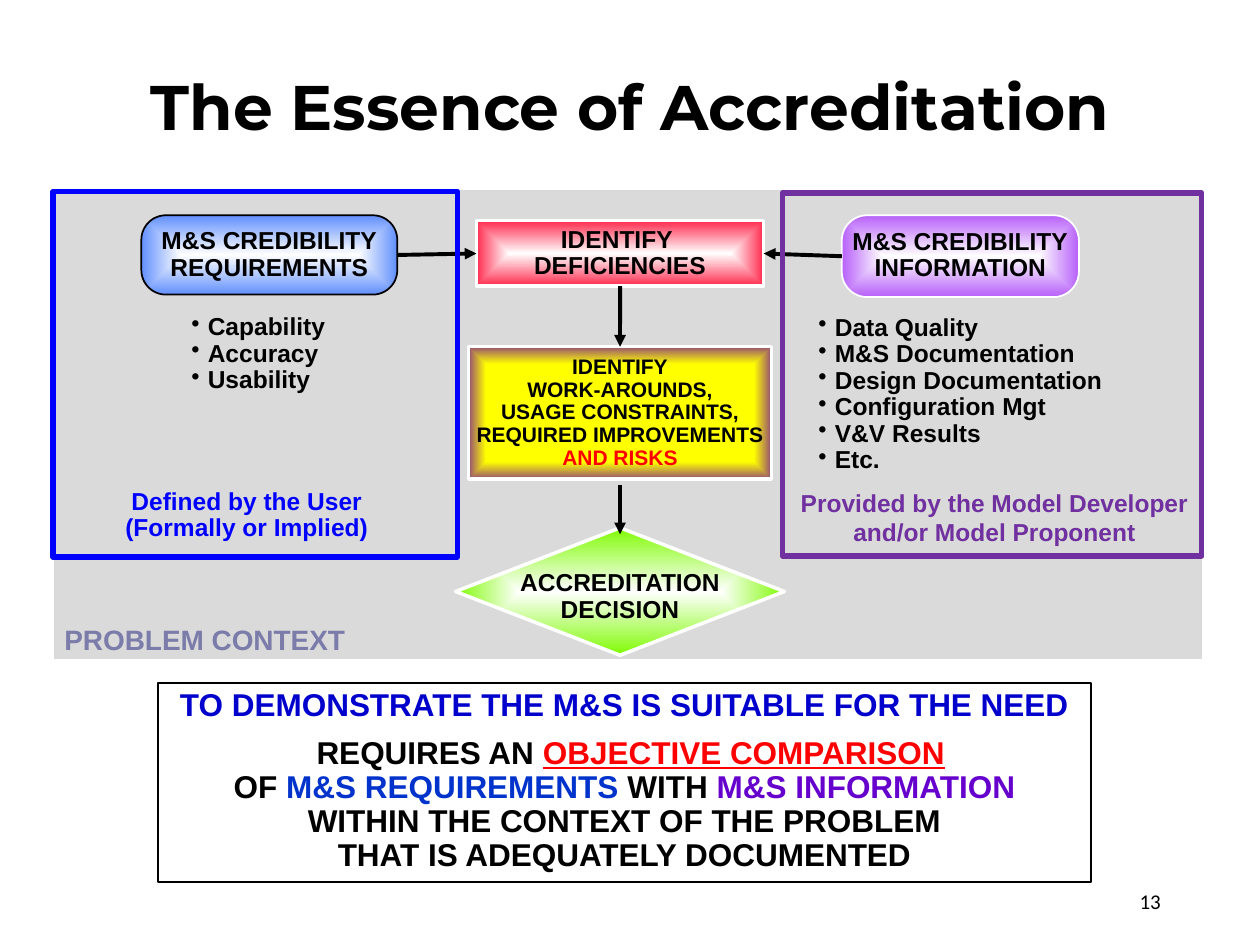
import pptx
import pptx.dml.color
import pptx.enum.shapes
import pptx.enum.text
import pptx.oxml
import pptx.oxml.ns
import pptx.util
from pptx.util import Cm

SHAPES = pptx.enum.shapes.MSO_SHAPE
ALIGN = pptx.enum.text.PP_ALIGN
ANCHOR = pptx.enum.text.MSO_ANCHOR
TOP, LEFT, BOTTOM, RIGHT = range(4)
BLACK, WHITE, RED = "000000", "FFFFFF", "FF0000"


def color(value):
    return pptx.dml.color.RGBColor.from_string(value)


def add_xml(parent, tag, content="", attributes=""):
    namespace = pptx.oxml.ns.nsdecls("a")
    element = pptx.oxml.parse_xml(f"<a:{tag} {namespace} {attributes}>{content}</a:{tag}>")
    parent.append(element)
    return element


def within(box, left, top, width, height):
    """Turn a place relative to a box into a place on the slide."""
    return box[0] + left, box[1] + top, width, height


def write_text(shape, paragraphs, size, ink=BLACK, font="Arial", bold=True, align=ALIGN.CENTER,
               anchor=ANCHOR.TOP, spacing=0.9, wrap=False, bullet=False):
    """Each paragraph is a string or a list of (text, colour) runs."""
    frame = shape.text_frame
    frame.word_wrap = wrap
    frame.vertical_anchor = anchor
    for index, content in enumerate(paragraphs):
        paragraph = frame.add_paragraph() if index else frame.paragraphs[0]
        paragraph.alignment = align
        paragraph.line_spacing = spacing
        if bullet:
            properties = paragraph._p.get_or_add_pPr()
            properties.set("marL", str(Cm(0.33)))
            properties.set("indent", str(-Cm(0.33)))
            add_xml(properties, "buChar", attributes='char="•"')
        for text, run_ink in [(content, ink)] if isinstance(content, str) else content:
            run = paragraph.add_run()
            run.text = text
            run.font.name = font
            run.font.size = pptx.util.Pt(size)
            run.font.bold = bold
            run.font.color.rgb = color(run_ink)
    return frame


def add_text(slide, place, paragraphs, size, **style):
    shape = slide.shapes.add_textbox(*map(Cm, place))
    return write_text(shape, paragraphs, size, **style)


def add_box(slide, kind, place, line=None, line_width=1, fill=None):
    shape = slide.shapes.add_shape(kind, *map(Cm, place))
    shape.shadow.inherit = False
    if fill:
        shape.fill.solid()
        shape.fill.fore_color.rgb = color(fill)
    else:
        shape.fill.background()
    if line:
        shape.line.color.rgb = color(line)
        shape.line.width = pptx.util.Pt(line_width)
    else:
        shape.line.fill.background()
    return shape


def add_glow_box(slide, kind, place, inner, outer, line, line_width, start=0):
    """A box whose colour runs from its centre to its edges."""
    shape = add_box(slide, kind, place, line, line_width)
    stops = "".join(f'<a:gs pos="{position * 1000}"><a:srgbClr val="{value}"/></a:gs>'
                    for position, value in ((start, inner), (100, outer)))
    center = '<a:fillToRect l="50000" t="50000" r="50000" b="50000"/>'
    gradient = add_xml(shape._element.spPr, "gradFill",
                       f'<a:gsLst>{stops}</a:gsLst><a:path path="shape">{center}</a:path>',
                       'rotWithShape="1"')
    no_fill = shape._element.spPr.find(pptx.oxml.ns.qn("a:noFill"))
    shape._element.spPr.replace(no_fill, gradient)
    return shape


def add_arrow(slide, start=(0, 0), end=(0, 0), joined=None):
    """An arrow between two points, or joined to two (shape, side) pairs."""
    connector = slide.shapes.add_connector(
        pptx.enum.shapes.MSO_CONNECTOR.STRAIGHT, *map(Cm, (*start, *end)))
    if joined:
        connector.begin_connect(*joined[0])
        connector.end_connect(*joined[1])
    connector.line.color.rgb = color(BLACK)
    connector.line.width = pptx.util.Pt(2.25)
    add_xml(connector.line._get_or_add_ln(), "tailEnd", attributes='type="triangle"')
    add_xml(connector._element.spPr, "effectLst")


def draw_title(slide, box):
    add_text(slide, box, ["The Essence of Accreditation"], 36, font="Montserrat",
             anchor=ANCHOR.MIDDLE, spacing=1.0, wrap=True)


def draw_flow(slide, box):
    # Grey problem context
    add_box(slide, SHAPES.RECTANGLE, box, WHITE, 1, "DADADA")
    add_text(slide, within(box, -0.05, 8.69, 6.22, 0.86), ["PROBLEM CONTEXT"], 16, ink="7C7CAA")

    # Inputs on both sides
    inputs = []
    for place, outer, line, word in (
            ((1.78, 0.53, 5.16, 1.6), "618FFD", BLACK, "REQUIREMENTS"),
            ((15.9, 0.53, 4.78, 1.65), "B760F9", WHITE, "INFORMATION")):
        shape = add_glow_box(slide, SHAPES.ROUNDED_RECTANGLE, within(box, *place),
                             WHITE, outer, line, 1)
        shape.adjustments[0] = 0.31
        write_text(shape, ["M&S CREDIBILITY", word], 14)
        inputs.append(shape)
    requirements, information = inputs

    # Steps centred on one axis
    axis = 11.43

    def add_step(kind, top, width, height, inner, outer, start=0):
        place = within(box, axis - width / 2, top, width, height)
        return add_glow_box(slide, kind, place, inner, outer, WHITE, 2, start)

    deficiencies = add_step(SHAPES.RECTANGLE, 0.64, 5.79, 1.32, WHITE, "FF2A4D")
    write_text(deficiencies, ["IDENTIFY ", "DEFICIENCIES"], 14, wrap=True)
    remedies = add_step(SHAPES.RECTANGLE, 3.18, 6.1, 2.67, "FFFF00", "954F72", 74)
    write_text(remedies, ["IDENTIFY", "WORK-AROUNDS,", "USAGE CONSTRAINTS,",
                          "REQUIRED IMPROVEMENTS", [("AND RISKS", RED)]],
               12, anchor=ANCHOR.MIDDLE)
    decision = add_step(SHAPES.DIAMOND, 6.83, 6.63, 2.57, WHITE, "7FFB03")
    frame = write_text(decision, ["ACCREDITATION", "DECISION"], 14, anchor=ANCHOR.BOTTOM)
    frame.margin_left = frame.margin_right = frame.margin_top = frame.margin_bottom = 0

    # Arrows
    add_arrow(slide, joined=((requirements, RIGHT), (deficiencies, LEFT)))
    add_arrow(slide, joined=((information, LEFT), (deficiencies, RIGHT)))
    add_arrow(slide, joined=((deficiencies, BOTTOM), (remedies, TOP)))
    center = box[0] + axis
    add_arrow(slide, (center, box[1] + 5.97), (center, box[1] + 6.96))


def draw_panel(slide, box, ink, items, items_place, caption, caption_place, caption_spacing):
    add_box(slide, SHAPES.RECTANGLE, box, ink, 3)
    add_text(slide, within(box, *items_place), items, 14, align=ALIGN.LEFT, bullet=True)
    add_text(slide, within(box, *caption_place), caption, 14, ink=ink, spacing=caption_spacing)


def draw_conclusion(slide, box):
    shape = add_box(slide, SHAPES.RECTANGLE, box, BLACK, 1)
    frame = write_text(shape, [
        [("TO DEMONSTRATE THE M&S IS SUITABLE FOR THE NEED", "0000CC")],
        [("REQUIRES AN ", BLACK), ("OBJECTIVE COMPARISON", RED)],
        [("OF ", BLACK), ("M&S REQUIREMENTS", "0033CC"),
         (" WITH ", BLACK), ("M&S INFORMATION", "6600CC")],
        "WITHIN THE CONTEXT OF THE PROBLEM",
        "THAT IS ADEQUATELY DOCUMENTED"], 18, wrap=True)
    comparison = frame.paragraphs[1]
    comparison.space_before = pptx.util.Pt(8)
    comparison._p.get_or_add_pPr().set("marL", str(Cm(0.25)))
    comparison.runs[1].font.underline = True


def draw_slide_number(slide, box):
    add_text(slide, box, ["13"], 12, font="Calibri", bold=False, align=ALIGN.RIGHT,
             anchor=ANCHOR.MIDDLE, spacing=1.0, wrap=True)


def main():
    presentation = pptx.Presentation()
    presentation.slide_width, presentation.slide_height = Cm(25.4), Cm(19.05)
    slide = presentation.slides.add_slide(presentation.slide_layouts[6])
    draw_conclusion(slide, (3.18, 13.77, 18.82, 4.01))
    draw_flow(slide, (1.07, 3.81, 23.19, 9.5))
    draw_panel(slide, (15.77, 3.89, 8.46, 7.32), "7030A0",
               ["Data Quality", "M&S Documentation", "Design Documentation",
                "Configuration Mgt", "V&V Results", "Etc."], (0.48, 2.34, 6.25, 4.55),
               ["Provided by the Model Developer", "and/or Model Proponent"],
               (0.1, 5.82, 8.36, 1.45), 1.0)
    draw_panel(slide, (1.07, 3.86, 8.15, 7.37), "0000FF",
               ["Capability", "Accuracy", "Usability"], (2.54, 2.36, 3.2, 1.85),
               ["Defined by the User", "(Formally or Implied)"],
               (0.41, 5.87, 6.99, 1.4), 0.9)
    draw_title(slide, (1.75, 1.22, 21.9, 1.8))
    draw_slide_number(slide, (17.93, 17.65, 5.72, 1.02))
    presentation.save("out.pptx")


if __name__ == "__main__":
    main()
